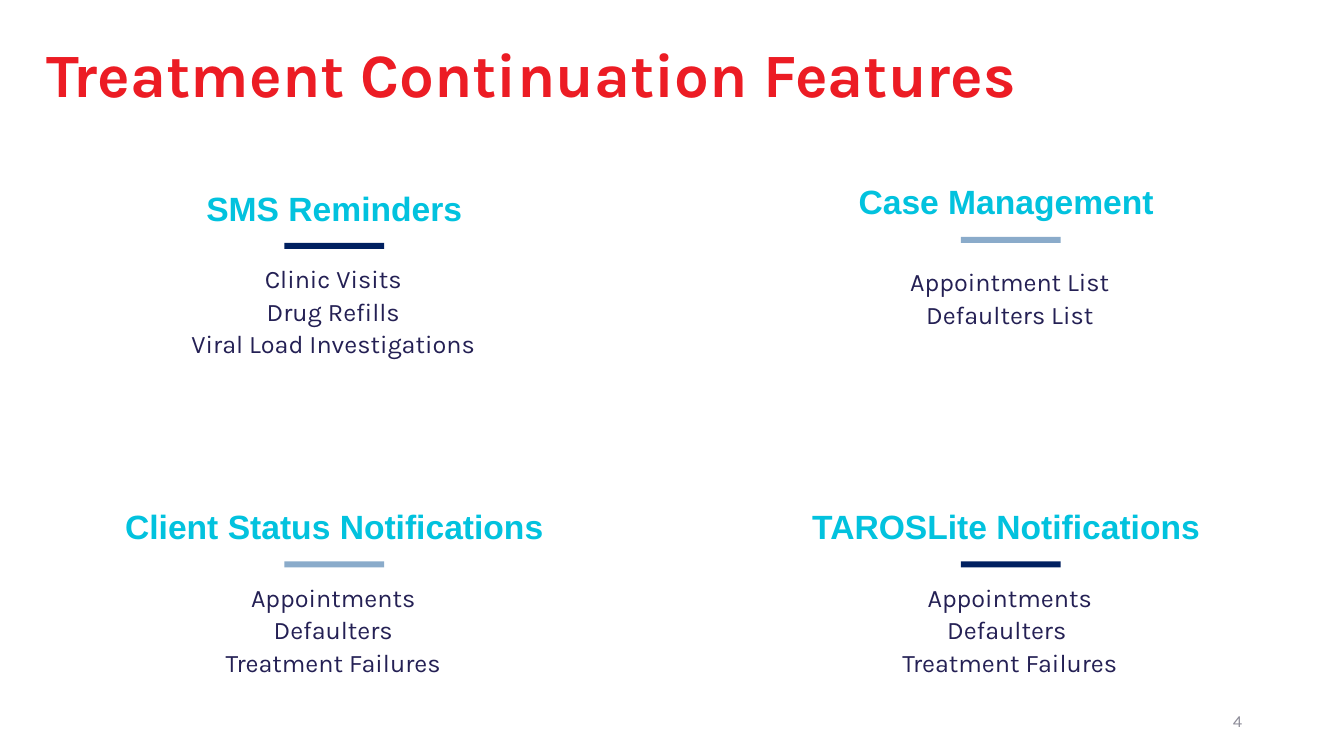
from dataclasses import dataclass

from lxml import etree
from pptx import Presentation
from pptx.dml.color import RGBColor
from pptx.enum.shapes import MSO_SHAPE
from pptx.enum.text import MSO_ANCHOR, MSO_AUTO_SIZE, PP_ALIGN
from pptx.oxml.ns import qn
from pptx.shapes.base import BaseShape
from pptx.slide import Slide
from pptx.text.text import TextFrame
from pptx.util import Inches, Length, Pt

RECTANGLE = MSO_SHAPE.RECTANGLE
TOP, MIDDLE = MSO_ANCHOR.TOP, MSO_ANCHOR.MIDDLE
LEFT, CENTER, RIGHT = PP_ALIGN.LEFT, PP_ALIGN.CENTER, PP_ALIGN.RIGHT
NO_AUTOFIT = MSO_AUTO_SIZE.NONE

RED = RGBColor(0xEC, 0x1C, 0x24)
CYAN = RGBColor(0x02, 0xC2, 0xDE)
INDIGO = RGBColor(0x24, 0x20, 0x54)
NAVY = RGBColor(0x00, 0x20, 0x60)
STEEL = RGBColor(0x8A, 0xAB, 0xCA)
GREY = RGBColor(0x8E, 0x8D, 0x99)

COMPARISON_LAYOUT = 3 + 1
LEFT_COLUMN, RIGHT_COLUMN = 0.89, 7.6
HEADING_WIDTH, LIST_WIDTH, BAR_WIDTH = 4.85, 4.23, 0.99
NO_INSETS = {side: 0 for side in
             ("margin_left", "margin_top", "margin_right", "margin_bottom")}


@dataclass(frozen=True)
class TextStyle:
    font: str
    size: int
    color: RGBColor
    align: PP_ALIGN
    bold: bool = False
    line_spacing: float | Length = 1.0


@dataclass(frozen=True)
class Feature:
    heading: str
    items: tuple[str, ...]
    left: float
    top: float
    bar_color: RGBColor
    list_drop: float = 0.72


TITLE = TextStyle("Karla", 44, RED, LEFT, True, 0.9)
HEADING = TextStyle("Arial", 24, CYAN, CENTER, True, Pt(28))
ITEM = TextStyle("Karla", 18, INDIGO, CENTER, False, Pt(23.3))
PAGE_NUMBER = TextStyle("Karla", 12, GREY, RIGHT)

FEATURES = (
    Feature("SMS Reminders",
            ("Clinic Visits", "Drug Refills", "Viral Load Investigations"),
            LEFT_COLUMN, 1.87, NAVY),
    Feature("Case Management ", ("Appointment List", "Defaulters List"),
            RIGHT_COLUMN, 1.81, STEEL, 0.81),
    Feature("Client Status Notifications",
            ("Appointments", "Defaulters", "Treatment Failures"),
            LEFT_COLUMN, 5.03, STEEL),
    Feature("TAROSLite Notifications ",
            ("Appointments", "Defaulters ", "Treatment Failures"),
            RIGHT_COLUMN, 5.03, NAVY),
)


def set_attributes(target: object, values: dict) -> None:
    for name, value in values.items():
        setattr(target, name, value)


def place(shape: BaseShape, left: float, top: float, width: float, height: float) -> None:
    set_attributes(shape, {"left": Inches(left), "top": Inches(top),
                           "width": Inches(width), "height": Inches(height)})


def write(frame: TextFrame, lines: tuple[str, ...], style: TextStyle, **frame_format) -> None:
    frame.text = "\n".join(lines)
    set_attributes(frame, {"word_wrap": True, "auto_size": NO_AUTOFIT,
                           "vertical_anchor": TOP, **frame_format})
    for paragraph in frame.paragraphs:
        set_attributes(paragraph, {"alignment": style.align,
                                   "line_spacing": style.line_spacing,
                                   "space_before": Pt(0), "space_after": Pt(0)})
        for run in paragraph.runs:
            set_attributes(run.font, {"name": style.font, "size": Pt(style.size),
                                      "bold": style.bold})
            run.font.color.rgb = style.color


def remove_bullets(frame: TextFrame) -> None:
    for paragraph in frame.paragraphs:
        properties = paragraph._p.get_or_add_pPr()
        properties.set("marL", "0")
        properties.set("indent", "0")
        etree.SubElement(properties, qn("a:buNone"))


def add_text(slide: Slide, box: tuple[float, ...], text: str, style: TextStyle,
             **frame_format) -> None:
    label = slide.shapes.add_textbox(*map(Inches, box))
    write(label.text_frame, (text,), style, **frame_format)


def add_feature(slide: Slide, feature: Feature, item_list: BaseShape) -> None:
    add_text(slide, (feature.left, feature.top, HEADING_WIDTH, 0.39),
             feature.heading, HEADING, **NO_INSETS)

    place(item_list, feature.left + 0.3, feature.top + feature.list_drop,
          LIST_WIDTH, 0.32 * len(feature.items))
    write(item_list.text_frame, feature.items, ITEM, **NO_INSETS)
    remove_bullets(item_list.text_frame)

    bar_left = feature.left + (HEADING_WIDTH - BAR_WIDTH) / 2
    bar = slide.shapes.add_shape(RECTANGLE, Inches(bar_left), Inches(feature.top + 0.54),
                                 Inches(BAR_WIDTH), Inches(0.06))
    bar.shadow.inherit = False
    bar.fill.solid()
    bar.fill.fore_color.rgb = feature.bar_color
    bar.line.fill.background()


def main() -> None:
    presentation = Presentation()
    set_attributes(presentation, {"slide_width": Inches(13.33),
                                  "slide_height": Inches(7.5)})
    slide = presentation.slides.add_slide(presentation.slide_layouts[COMPARISON_LAYOUT])
    title, *item_lists = slide.placeholders
    place(title, 0.36, 0.39, 10.75, 0.9)
    write(title.text_frame, ("Treatment Continuation Features",), TITLE)
    for feature, item_list in zip(FEATURES, item_lists):
        add_feature(slide, feature, item_list)
    add_text(slide, (9.42, 6.95, 3, 0.4), "4", PAGE_NUMBER, vertical_anchor=MIDDLE)
    presentation.save("out.pptx")


if __name__ == "__main__":
    main()
